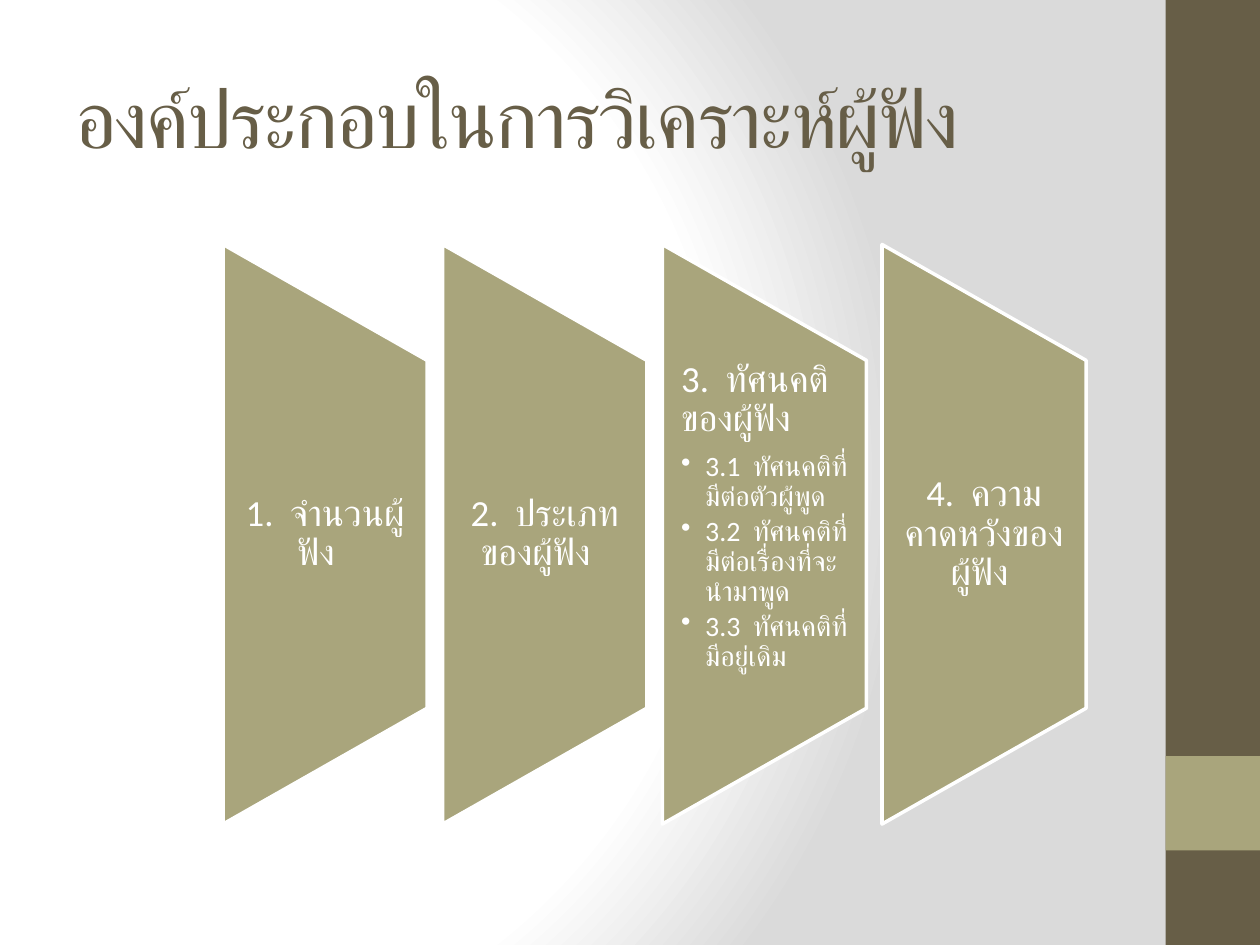
from dataclasses import dataclass

from lxml.etree import SubElement
from pptx import Presentation
from pptx.dml.color import RGBColor
from pptx.enum.shapes import MSO_SHAPE as Preset
from pptx.enum.text import MSO_ANCHOR as Anchor, PP_ALIGN as Align
from pptx.oxml import parse_xml
from pptx.oxml.ns import nsdecls, qn
from pptx.util import Emu, Pt

EMU_PER_PX = 9144


@dataclass(frozen=True)
class Theme:
    brown: str = "675E47"
    olive: str = "A9A57C"
    white: str = "FFFFFF"
    grey: str = "DADADA"
    title_font: str = "Cambria"
    body_font: str = "Calibri"
    title_size: int = 46
    heading_size: int = 21
    bullet_size: int = 16


@dataclass(frozen=True)
class Box:
    left: int
    top: int
    width: int
    height: int

    def emu(self):
        return [px(value) for value in (self.left, self.top, self.width, self.height)]


THEME = Theme()

PANELS = [
    ("1.  จำนวนผู้ฟัง  ", []),
    ("2.  ประเภทของผู้ฟัง  ", []),
    ("3.  ทัศนคติของผู้ฟัง", [
        "3.1  ทัศนคติที่มีต่อตัวผู้พูด",
        "3.2  ทัศนคติที่มีต่อเรื่องที่จะนำมาพูด",
        "3.3  ทัศนคติที่มีอยู่เดิม",
    ]),
    ("4.  ความคาดหวังของผู้ฟัง ", []),
]


def px(value):
    return Emu(round(value * EMU_PER_PX))


def color(value):
    return RGBColor.from_string(value)


def add_filled_shape(slide, preset, box, fill):
    shape = slide.shapes.add_shape(preset, *box.emu())
    shape.shadow.inherit = False
    shape.fill.solid()
    shape.fill.fore_color.rgb = color(fill)
    shape.line.fill.background()
    return shape


def add_text_frame(slide, box, anchor):
    frame = slide.shapes.add_textbox(*box.emu()).text_frame
    frame.word_wrap = True
    frame.vertical_anchor = anchor
    return frame


def set_font(paragraph, name, size, text_color):
    paragraph.font.name = name
    paragraph.font.size = Pt(size)
    paragraph.font.color.rgb = color(text_color)


def set_background(slide):
    slide.background.fill.gradient()
    default_gradient = slide.background._cSld.find(".//" + qn("a:gradFill"))
    stops = "".join(
        f'<a:gs pos="{position * 1000}"><a:srgbClr val="{value}"/></a:gs>'
        for position, value in ((0, THEME.white), (75, THEME.white), (100, THEME.grey))
    )
    gradient = parse_xml(
        f'<a:gradFill {nsdecls("a")} rotWithShape="1"><a:gsLst>{stops}</a:gsLst>'
        '<a:path path="circle">'
        '<a:fillToRect l="20000" t="50000" r="100000" b="50000"/>'
        "</a:path></a:gradFill>"
    )
    default_gradient.getparent().replace(default_gradient, gradient)


def add_sidebar(slide, box):
    add_filled_shape(slide, Preset.RECTANGLE, box, THEME.brown)
    accent = Box(box.left, box.top + box.height - 2 * box.width, box.width, box.width)
    add_filled_shape(slide, Preset.RECTANGLE, accent, THEME.olive)


def add_title(slide, box):
    paragraph = add_text_frame(slide, box, Anchor.MIDDLE).paragraphs[0]
    run = paragraph.add_run()
    run.text = "องค์ประกอบในการวิเคราะห์ผู้ฟัง"
    set_font(paragraph, THEME.title_font, THEME.title_size, THEME.brown)
    run.font._element.set("spc", "-100")


def make_bullet(paragraph):
    properties = paragraph._p.get_or_add_pPr()
    properties.set("marL", str(px(19)))
    properties.set("indent", str(px(-19)))
    SubElement(properties, qn("a:buChar")).set("char", "•")


def add_panel(slide, box, heading, bullets):
    center_x = box.left + box.width / 2
    center_y = box.top + box.height / 2
    unrotated = Box(center_x - box.height / 2, center_y - box.width / 2, box.height, box.width)
    shape = add_filled_shape(slide, Preset.FLOWCHART_MANUAL_OPERATION, unrotated, THEME.olive)
    shape.rotation = 270
    shape.line.color.rgb = color(THEME.white)
    shape.line.width = Pt(2)

    text_box = Box(box.left, box.top + box.height / 5, box.width, box.height * 3 / 5)
    frame = add_text_frame(slide, text_box, Anchor.TOP if bullets else Anchor.MIDDLE)
    frame.margin_left = frame.margin_right = px(15)
    frame.margin_top = frame.margin_bottom = 0
    for index, text in enumerate([heading, *bullets]):
        paragraph = frame.add_paragraph() if index else frame.paragraphs[0]
        paragraph.text = text
        paragraph.line_spacing = 0.9
        paragraph.space_after = Pt(2.4 if index else 7.35)
        paragraph.alignment = Align.LEFT if bullets else Align.CENTER
        if index:
            make_bullet(paragraph)
        size = THEME.bullet_size if index else THEME.heading_size
        set_font(paragraph, THEME.body_font, size, THEME.white)


def add_panels(slide, box, panel_width):
    pitch = (box.width - panel_width) / (len(PANELS) - 1)
    for index, (heading, bullets) in enumerate(PANELS):
        panel = Box(box.left + index * pitch, box.top, panel_width, box.height)
        add_panel(slide, panel, heading, bullets)


def main():
    presentation = Presentation()
    presentation.slide_width = px(1000)
    presentation.slide_height = px(750)
    slide = presentation.slides.add_slide(presentation.slide_layouts[6])
    set_background(slide)
    add_sidebar(slide, Box(925, 0, 75, 750))
    add_title(slide, Box(50, 30, 833, 125))
    add_panels(slide, Box(177, 194, 685, 460), 162)
    presentation.save("out.pptx")


if __name__ == "__main__":
    main()
